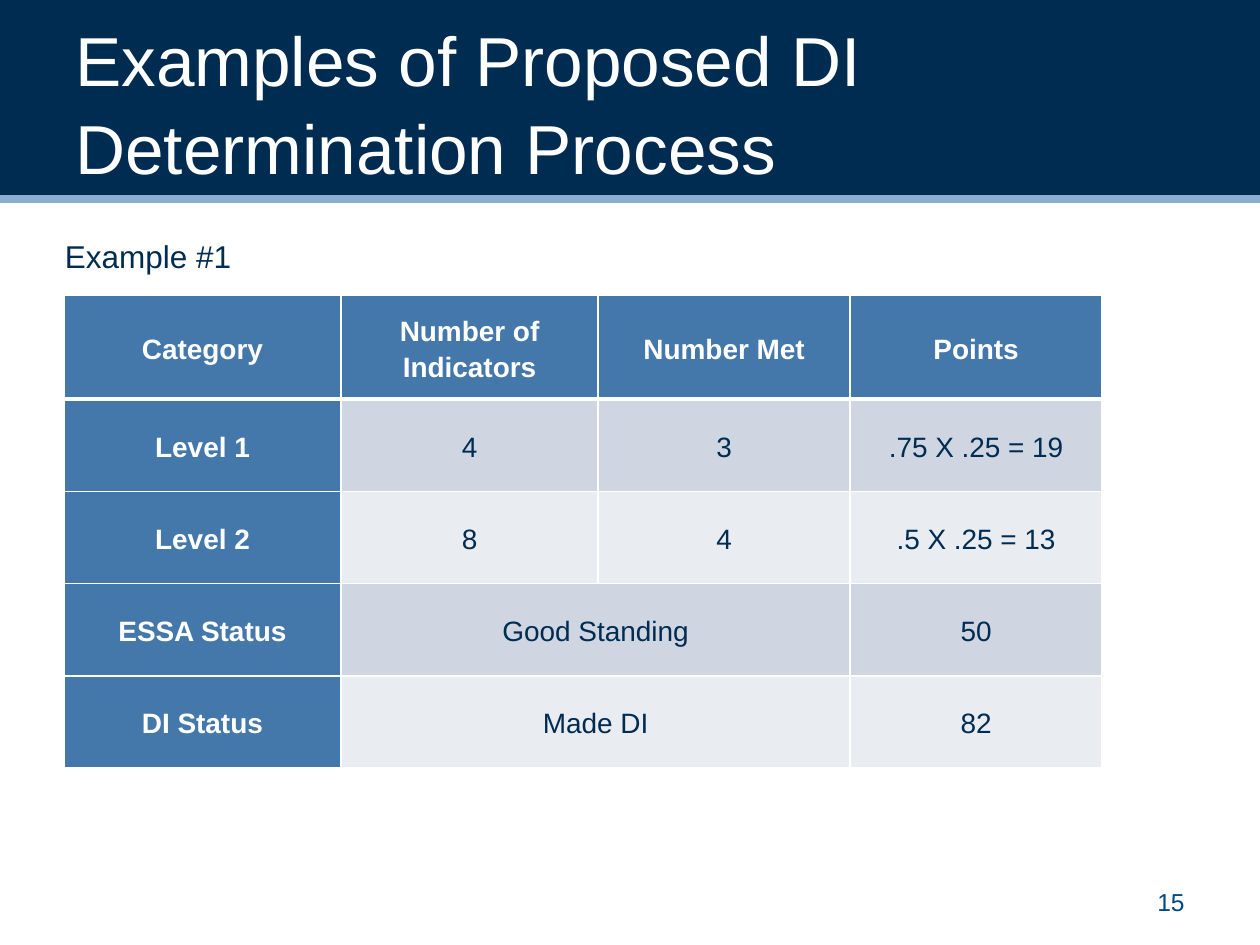
from dataclasses import dataclass

from lxml import etree
from pptx import Presentation
from pptx import util as u
from pptx.dml import color
from pptx.enum import shapes, text
from pptx.oxml import ns

Pt = u.Pt


@dataclass(frozen=True)
class Theme:
    """Colours, font and type sizes."""
    navy: str = "002C51"
    rule: str = "8AADD0"
    blue: str = "4477AA"
    dark: str = "CFD6E2"
    light: str = "E9ECF1"
    white: str = "FFFFFF"
    page: str = "004884"
    font: str = "Arial"
    title: float = 39.6
    label: float = 18
    cell: float = 16
    foot: float = 14


THEME = Theme()
MID = text.MSO_ANCHOR.MIDDLE
ROWS = [
    ["Category", "Number of Indicators", "Number Met", "Points"],
    ["Level 1", "4", "3", ".75 X .25 = 19"],
    ["Level 2", "8", "4", ".5 X .25 = 13"],
    ["ESSA Status", "Good Standing", None, "50"],
    ["DI Status", "Made DI", None, "82"],
]
WIDTHS = [158.4, 146.9, 144, 144]
HEIGHTS = [59] + [52.75] * 4


def rgb(tone):
    """Turn a hex string into a colour."""
    return color.RGBColor.from_string(tone)


def apply(item, form):
    """Set each attribute of an item from a dict."""
    for name, value in form.items():
        setattr(item, name, value)


def style(para, words, size, tone, bold=False, **form):
    """Write and format one paragraph."""
    para.text = words
    apply(para, form)
    apply(para.font, {"name": THEME.font, "size": Pt(size), "bold": bold})
    para.font.color.rgb = rgb(tone)


def label(slide, box, words, size, tone, anchor=MID, **form):
    """Place a wrapped text box."""
    frame = slide.shapes.add_textbox(*map(Pt, box)).text_frame
    apply(frame, {"word_wrap": True, "vertical_anchor": anchor})
    style(frame.paragraphs[0], words, size, tone, **form)


def header(slide, box, words):
    """Draw the title band, its lower rule and the title."""
    left, top, width, height = box
    band = slide.shapes.add_shape(shapes.MSO_SHAPE.RECTANGLE, *map(Pt, box))
    band.shadow.inherit = False
    band.fill.solid()
    band.fill.fore_color.rgb = rgb(THEME.navy)
    band.line.fill.background()
    base = top + height
    rule = slide.shapes.add_connector(
        shapes.MSO_CONNECTOR.STRAIGHT, *map(Pt, (left, base, left + width, base)))
    rule.line.color.rgb = rgb(THEME.rule)
    rule.line.width = Pt(4.5)
    etree.SubElement(rule.element.spPr, ns.qn("a:effectLst"))
    label(slide, (left + 36, top + 12.5, width - 72, 90), words,
          THEME.title, THEME.white, line_spacing=1.05)


def edge(cell, side, width):
    """Add one white border to a cell."""
    line = etree.SubElement(cell._tc.get_or_add_tcPr(), ns.qn(f"a:ln{side}"),
                            w=str(int(Pt(width))))
    fill = etree.SubElement(line, ns.qn("a:solidFill"))
    etree.SubElement(fill, ns.qn("a:srgbClr"), val=THEME.white)


def fill_cell(cell, row, col, words):
    """Format one table cell by its place in the grid."""
    head = row == 0 or col == 0
    for side, width in {"L": 1, "R": 1, "T": 3 if row == 1 else 1,
                        "B": 3 if row == 0 else 1}.items():
        edge(cell, side, width)
    cell.fill.solid()
    band = THEME.dark if row % 2 else THEME.light
    cell.fill.fore_color.rgb = rgb(THEME.blue if head else band)
    apply(cell, {"margin_left": Pt(5), "margin_right": Pt(5), "margin_top": 0,
                 "margin_bottom": 0, "vertical_anchor": MID})
    if words is not None:
        style(cell.text_frame.paragraphs[0], words, THEME.cell,
              THEME.white if head else THEME.navy, head,
              alignment=text.PP_ALIGN.CENTER, line_spacing=1.15)


def grid(slide, box, rows):
    """Place the table, joining each gap to the cell on its left."""
    table = slide.shapes.add_table(len(rows), len(rows[0]), *map(Pt, box)).table
    for col, width in zip(table.columns, WIDTHS):
        col.width = Pt(width)
    for row, height in zip(table.rows, HEIGHTS):
        row.height = Pt(height)
    for r, line in enumerate(rows):
        for c, words in enumerate(line):
            fill_cell(table.cell(r, c), r, c, words)
            if words is None:
                table.cell(r, c - 1).merge(table.cell(r, c))


def main():
    """Build and save the slide."""
    deck = Presentation()
    apply(deck, {"slide_width": Pt(720), "slide_height": Pt(540)})
    slide = deck.slides.add_slide(deck.slide_layouts[6])
    header(slide, (0, 0, 720, 113.8), "Examples of Proposed DI Determination Process")
    grid(slide, (36.5, 169, sum(WIDTHS), sum(HEIGHTS)), ROWS)
    label(slide, (516, 500.5, 168, 29), "15", THEME.foot, THEME.page,
          alignment=text.PP_ALIGN.RIGHT)
    label(slide, (30, 132, 480, 30), "Example #1", THEME.label, THEME.navy,
          text.MSO_ANCHOR.TOP)
    deck.save("out.pptx")


if __name__ == "__main__":
    main()
